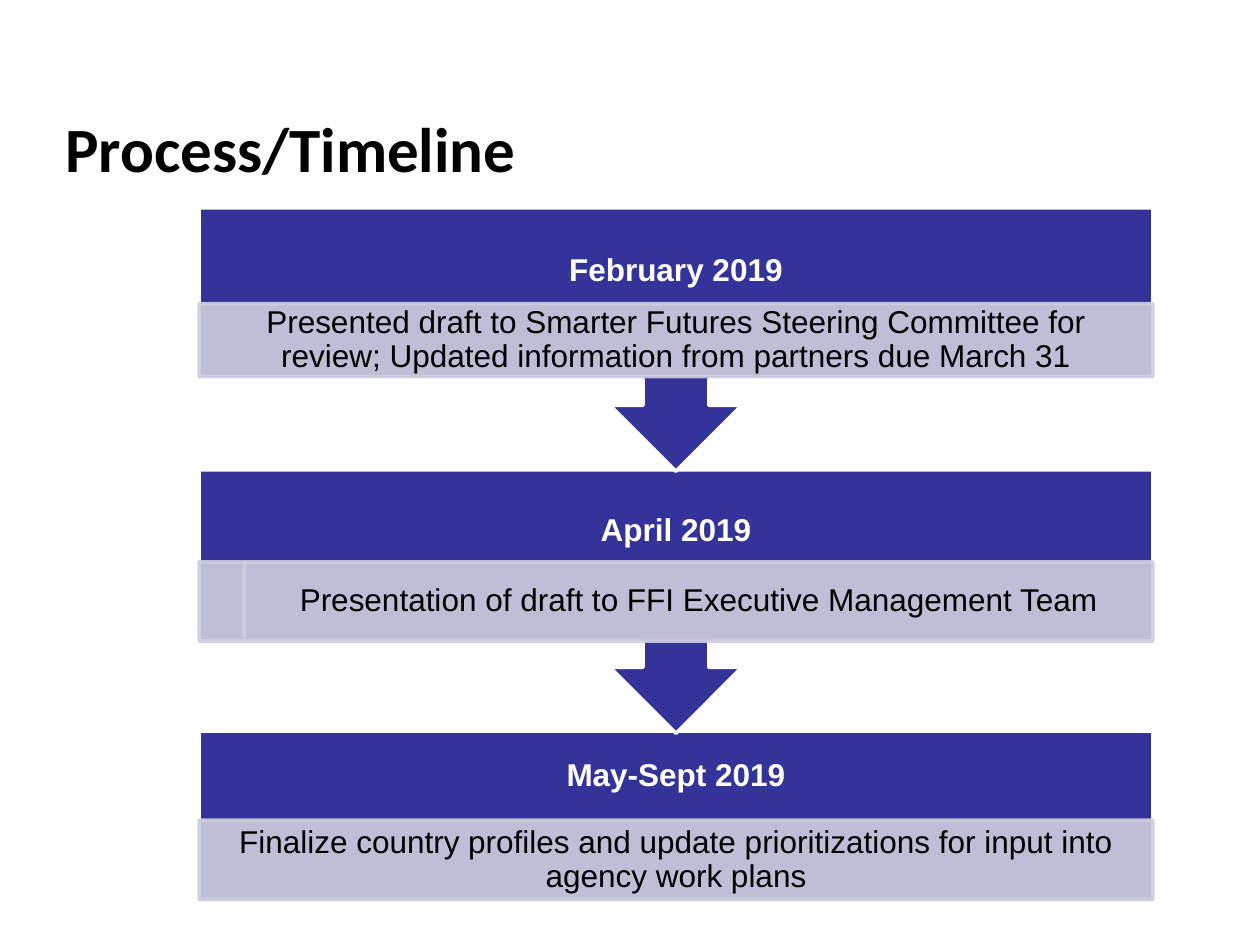
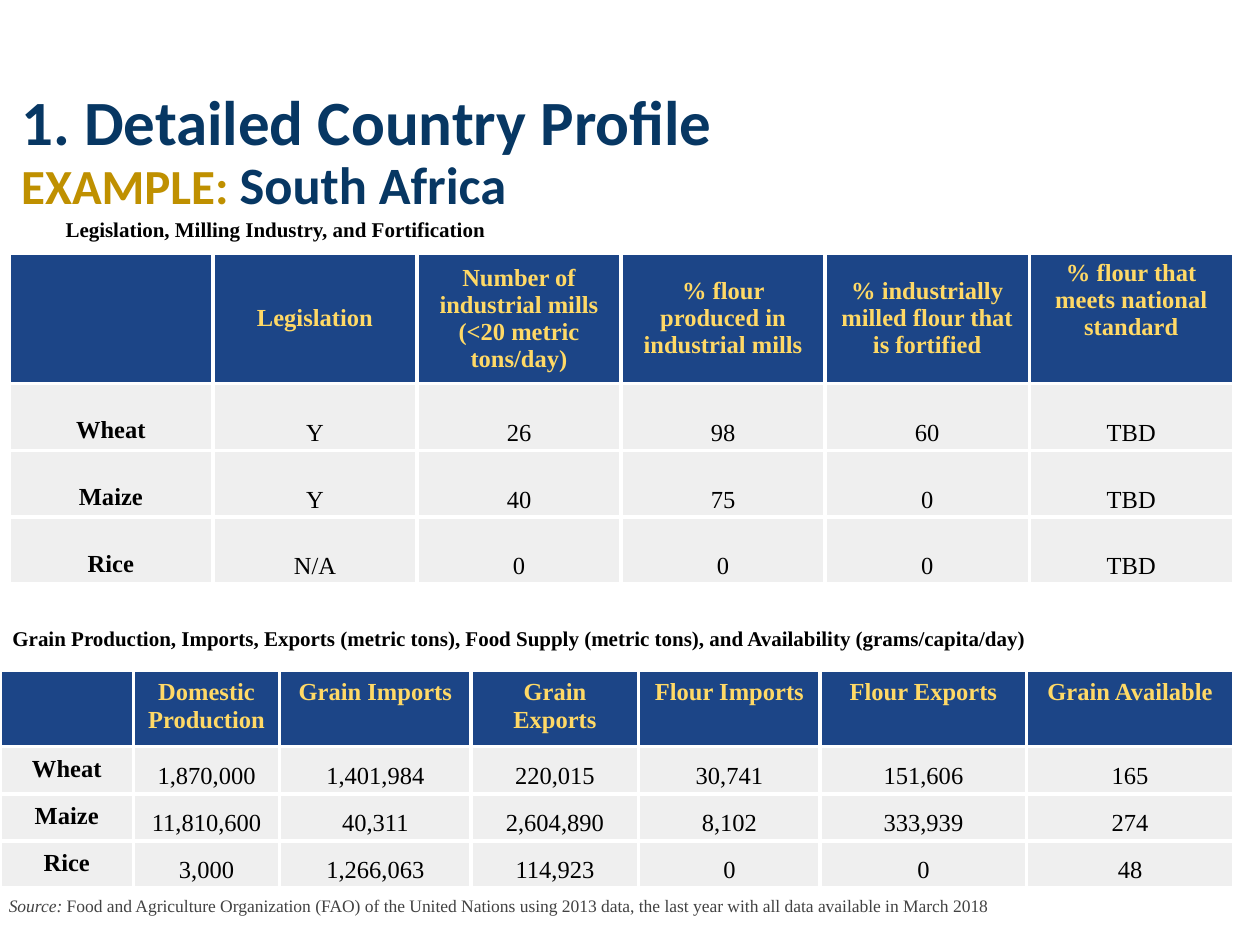
from lxml import etree
from pptx import Presentation
from pptx.dml.color import RGBColor
from pptx.enum.shapes import MSO_SHAPE
from pptx.enum.text import MSO_ANCHOR, PP_ALIGN
from pptx.oxml.ns import qn
from pptx.util import Inches, Pt

RECT, CALLOUT = MSO_SHAPE.RECTANGLE, MSO_SHAPE.DOWN_ARROW_CALLOUT
TOP, MIDDLE, BOTTOM = MSO_ANCHOR.TOP, MSO_ANCHOR.MIDDLE, MSO_ANCHOR.BOTTOM
LEFT, CENTER = PP_ALIGN.LEFT, PP_ALIGN.CENTER

TITLE_FONT, STEP_FONT, TABLE_FONT = "Calibri", "Arial", "Times New Roman"
BLACK, WHITE, GREY = "000000", "FFFFFF", "424242"
INDIGO, LAVENDER = "333399", "CECEDE"
NAVY, OCHRE = "073763", "BF9000"
HEADER_BLUE, HEADER_GOLD, CELL_GREY = "1C4587", "FFD966", "EFEFEF"

STEP_LEFT, STEP_WIDTH = 1.58, 7.57
STEPS = [
    {"top": 1.65, "height": 2.09, "shape": CALLOUT, "month": "February 2019",
     "label": (1.91, 0.48), "detail": (2.41, 0.58), "indent": 0,
     "text": "Presented draft to Smarter Futures Steering Committee for review; "
             "Updated information from partners due March 31"},
    {"top": 3.73, "height": 2.09, "shape": CALLOUT, "month": "April 2019",
     "label": (3.98, 0.48), "detail": (4.46, 0.63), "indent": 0.36,
     "text": "Presentation of draft to FFI Executive Management Team"},
    {"top": 5.8, "height": 1.36, "shape": RECT, "month": "May-Sept 2019",
     "label": (5.8, 0.73), "detail": (6.51, 0.63), "indent": 0,
     "text": "Finalize country profiles and update prioritizations for input "
             "into agency work plans"},
]

MILLING_ROWS = [
    ["", "Legislation", "Number of industrial mills (<20 metric tons/day)",
     "% flour produced in industrial mills",
     "% industrially milled flour that is fortified",
     "% flour that meets national standard"],
    ["Wheat", "Y", "26", "98", "60", "TBD"],
    ["Maize", "Y", "40", "75", "0", "TBD"],
    ["Rice", "N/A", "0", "0", "0", "TBD"],
]
GRAIN_ROWS = [
    ["", "Domestic Production", "Grain Imports", "Grain Exports",
     "Flour Imports", "Flour Exports", "Grain Available"],
    ["Wheat", "1,870,000", "1,401,984", "220,015", "30,741", "151,606", "165"],
    ["Maize", "11,810,600", "40,311", "2,604,890", "8,102", "333,939", "274"],
    ["Rice", "3,000", "1,266,063", "114,923", "0", "0", "48"],
]
GRAIN_WIDTHS = [1.06, 1.16, 1.52, 1.33, 1.44, 1.64, 1.64]


def rgb(value):
    """Turn a hex string into a colour."""
    return RGBColor.from_string(value)


def set_font(font, name, size, color, bold=False, italic=False):
    """Set the font of a paragraph or a run."""
    font.name, font.size = name, Pt(size)
    font.bold, font.italic = bold, italic
    font.color.rgb = rgb(color)


def set_insets(target, side, top, bottom=None):
    """Set the inner margins of a text frame or a table cell."""
    target.margin_left = target.margin_right = Inches(side)
    target.margin_top = Inches(top)
    target.margin_bottom = Inches(top if bottom is None else bottom)


def write(p, text, name, size, color, bold=False, align=LEFT, spacing=None):
    """Fill a paragraph with text in one style."""
    p.alignment, p.line_spacing = align, spacing
    set_font(p.font, name, size, color, bold)
    p.add_run().text = text


def add_text_box(s, left, top, width, height, side, inset):
    """Add a wrapped, vertically centred text box and return its frame."""
    tf = s.shapes.add_textbox(Inches(left), Inches(top), Inches(width), Inches(height)).text_frame
    tf.word_wrap, tf.vertical_anchor = True, MIDDLE
    set_insets(tf, side, inset)
    return tf


def add_title(s, left, top, width, text, color):
    """Add the slide title and return its frame."""
    tf = add_text_box(s, left, top, width, 1.45, 0.1, 0.05)
    write(tf.paragraphs[0], text, TITLE_FONT, 36, color, True, spacing=0.9)
    return tf


def add_block(s, kind, left, top, width, height, fill, line, opacity=100):
    """Add a filled and outlined preset shape."""
    sp = s.shapes.add_shape(kind, Inches(left), Inches(top), Inches(width), Inches(height))
    sp.shadow.inherit = False
    sp.fill.solid()
    sp.fill.fore_color.rgb = rgb(fill)
    sp.line.color.rgb, sp.line.width = rgb(line), Pt(2)
    if opacity < 100:
        for clr in sp._element.spPr.iter(qn("a:srgbClr")):
            etree.SubElement(clr, qn("a:alpha"), val=str(opacity * 1000))
    return sp


def add_detail(s, left, top, width, height, text=""):
    """Add a translucent detail bar, with text if there is any."""
    sp = add_block(s, RECT, left, top, width, height, LAVENDER, LAVENDER, 90)
    if text:
        tf = sp.text_frame
        tf.word_wrap, tf.vertical_anchor = True, MIDDLE
        set_insets(tf, 0.14, 0.03)
        write(tf.paragraphs[0], text, STEP_FONT, 18, BLACK, align=CENTER, spacing=0.9)


def add_step(s, step):
    """Add one timeline step: block, month and detail bar."""
    add_block(s, step["shape"], STEP_LEFT, step["top"], STEP_WIDTH, step["height"], INDIGO, WHITE)
    tf = add_text_box(s, STEP_LEFT, step["label"][0], STEP_WIDTH, step["label"][1], 0.14, 0.14)
    write(tf.paragraphs[0], step["month"], STEP_FONT, 18, WHITE, True, CENTER, 0.9)
    indent = step["indent"]
    if indent:
        add_detail(s, STEP_LEFT, step["detail"][0], indent, step["detail"][1])
    add_detail(s, STEP_LEFT + indent, step["detail"][0], STEP_WIDTH - indent,
               step["detail"][1], step["text"])


def set_borders(cell, color, width):
    """Draw all four borders of a cell."""
    tcPr = cell._tc.get_or_add_tcPr()
    for i, side in enumerate(("a:lnL", "a:lnR", "a:lnT", "a:lnB")):
        ln = etree.Element(qn(side), w=str(Pt(width)))
        fill = etree.SubElement(ln, qn("a:solidFill"))
        etree.SubElement(fill, qn("a:srgbClr"), val=color)
        tcPr.insert(i, ln)


def add_grid(s, left, top, widths, heights):
    """Add a plain table with white borders and no fills."""
    table = s.shapes.add_table(len(heights), len(widths), Inches(left), Inches(top),
                               Inches(sum(widths)), Inches(sum(heights))).table
    table.first_row = table.horz_banding = False
    for col, width in zip(table.columns, widths):
        col.width = Inches(width)
    for row, height in zip(table.rows, heights):
        row.height = Inches(height)
    for cell in table.iter_cells():
        cell.fill.background()
        set_borders(cell, WHITE, 2.25)
    return table


def fill_grid(table, first_row, rows, header_anchor, label_anchor, inset):
    """Write a header row and its data rows into the table."""
    for i, row in enumerate(rows):
        for j, text in enumerate(row):
            cell = table.cell(first_row + i, j)
            header, label = i == 0, j == 0
            cell.fill.solid()
            cell.fill.fore_color.rgb = rgb(HEADER_BLUE if header else CELL_GREY)
            if header or label:
                set_insets(cell, 0.07, inset)
                cell.vertical_anchor = header_anchor if header else label_anchor
            else:
                set_insets(cell, 0.03, 0.03)
                cell.vertical_anchor = BOTTOM
            if text:
                write(cell.text_frame.paragraphs[0], text, TABLE_FONT, 14,
                      HEADER_GOLD if header else BLACK, header or label, CENTER)


def add_grain_table(s):
    """Add the grain supply table with its source line."""
    table = add_grid(s, 0, 5.32, GRAIN_WIDTHS, [0.57, 0.36, 0.36, 0.36, 0.44])
    fill_grid(table, 0, GRAIN_ROWS, TOP, TOP, 0.07)
    source = table.cell(4, 0)
    source.merge(table.cell(4, len(GRAIN_WIDTHS) - 1))
    set_insets(source, 0.07, 0.07)
    p = source.text_frame.paragraphs[0]
    for text, italic in (("Source:", True),
                         (" Food and Agriculture Organization (FAO) of the United Nations using "
                          "2013 data, the last year with all data available in March 2018", False)):
        r = p.add_run()
        r.text = text
        set_font(r.font, TABLE_FONT, 10, GREY, italic=italic)


def add_milling_table(s):
    """Add the milling and fortification table with its caption row."""
    table = add_grid(s, 0.07, 1.69, [1.62] * 6, [0.32, 0.96, 0.53, 0.53, 0.53])
    fill_grid(table, 1, MILLING_ROWS, MIDDLE, BOTTOM, 0.05)
    table.cell(1, 5).vertical_anchor = TOP
    caption = table.cell(0, 0)
    caption.merge(table.cell(0, 4))
    set_insets(caption, 0.07, 0.05)
    caption.margin_left = Inches(0.45)
    set_insets(table.cell(0, 5), 0, 0)
    write(caption.text_frame.paragraphs[0], "Legislation, Milling Industry, and Fortification",
          TABLE_FONT, 12, BLACK, True)


def build_timeline(s):
    """Build the process slide."""
    add_title(s, 0.42, 0.48, 8.62, "Process/Timeline", BLACK)
    for step in reversed(STEPS):
        add_step(s, step)


def build_profile(s):
    """Build the country profile slide."""
    tf = add_title(s, 0.07, 0.49, 9.14, "1. Detailed Country Profile", NAVY)
    p = tf.add_paragraph()
    p.line_spacing = 0.9
    for text, size, color in (("EXAMPLE: ", 28, OCHRE), ("South Africa", 30, NAVY)):
        r = p.add_run()
        r.text = text
        set_font(r.font, TITLE_FONT, size, color, True)
    tf = add_text_box(s, 0, 4.87, 9.21, 0.39, 0.1, 0.1)
    write(tf.paragraphs[0], "Grain Production, Imports, Exports (metric tons), Food Supply "
          "(metric tons), and Availability (grams/capita/day)", TABLE_FONT, 12, BLACK, True)
    add_grain_table(s)
    add_milling_table(s)


def main():
    """Build and save the presentation."""
    prs = Presentation()
    prs.slide_width, prs.slide_height = Inches(10), Inches(7.5)
    for build in (build_timeline, build_profile):
        build(prs.slides.add_slide(prs.slide_layouts[6]))
    prs.save("out.pptx")


if __name__ == "__main__":
    main()
